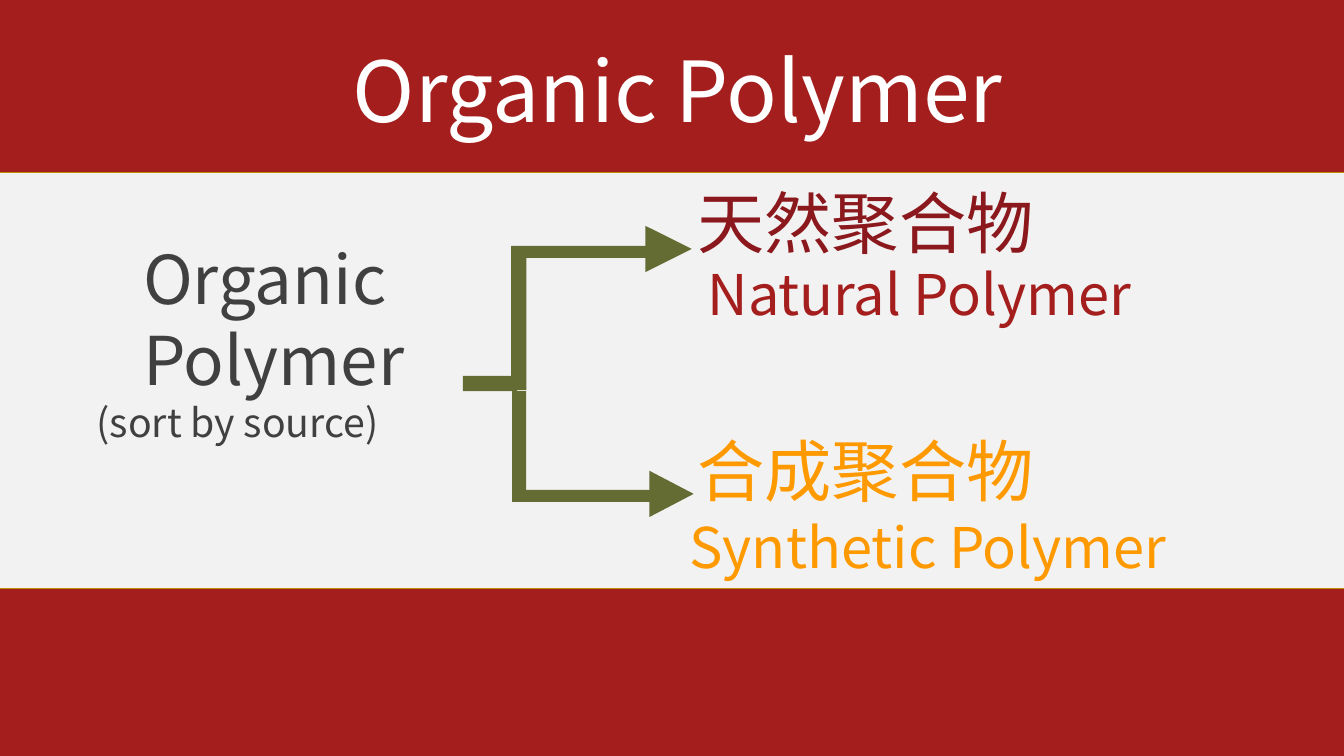
"""Build the Organic Polymer classification slide."""
from lxml import etree
from pptx import Presentation
from pptx.dml.color import RGBColor
from pptx.enum.shapes import MSO_SHAPE as Shape
from pptx.enum.text import MSO_ANCHOR, MSO_AUTO_SIZE, PP_ALIGN
from pptx.oxml.ns import qn
from pptx.util import Inches, Pt

FONT = "Noto Sans CJK TC"
COLORS = {
    "paper": "F2F2F2", "red": "A31E1C", "dark_red": "8B181D", "gold": "BD8E00",
    "blue": "43739E", "olive": "646C34", "grey": "404040", "orange": "FF9900",
    "white": "FFFFFF",
}


def add_block(kind, left, top, width, height, fill, line=None):
    block = page.shapes.add_shape(kind, *map(Inches, (left, top, width, height)))
    block.shadow.inherit = False
    block.fill.solid()
    block.fill.fore_color.rgb = RGBColor.from_string(COLORS[fill])
    if line:
        block.line.color.rgb = RGBColor.from_string(COLORS[line])
        block.line.width = Pt(1)
    else:
        block.line.fill.background()
    return block


def write_text(box, text, size, color, align=PP_ALIGN.LEFT):
    frame = box.text_frame
    for name, value in {"word_wrap": True, "auto_size": MSO_AUTO_SIZE.NONE,
                        "vertical_anchor": MSO_ANCHOR.TOP}.items():
        setattr(frame, name, value)
    para = frame.paragraphs[0]
    para.alignment = align
    span = para.add_run()
    span.text = text
    for name, value in {"name": FONT, "size": Pt(size)}.items():
        setattr(span.font, name, value)
    span.font.color.rgb = RGBColor.from_string(COLORS[color])
    latin = span.font._element.find(qn("a:latin"))
    east_asian = etree.Element(qn("a:ea"), typeface=FONT)
    latin.addnext(east_asian)


deck = Presentation()
deck.slide_width, deck.slide_height = Inches(13.33), Inches(7.5)
page = deck.slides.add_slide(deck.slide_layouts[5])

for top, height, fill, line in [
    (-0.11, 8.02, "paper", "blue"),
    (-0.11, 1.82, "red", "gold"),
    (5.84, 1.67, "red", "gold"),
]:
    add_block(Shape.RECTANGLE, -0.13, top, 13.61, height, fill, line)

title = page.shapes.title
title.element.getparent().append(title.element)
for name, value in {"left": 0.78, "top": 0.33, "width": 11.88, "height": 1.11}.items():
    setattr(title, name, Inches(value))
write_text(title, "Organic Polymer", 60, "white", PP_ALIGN.CENTER)

for kind, left, top, width, height, rotation in [
    (Shape.RIGHT_ARROW, 5.08, 4.8, 1.6, 0.24, 0),
    (Shape.ISOSCELES_TRIANGLE, 6.43, 4.68, 0.46, 0.44, 90),
    (Shape.RECTANGLE, 5.08, 3.88, 0.14, 1.1, 0),
    (Shape.RIGHT_ARROW, 5.07, 2.38, 1.5, 0.24, 0),
    (Shape.ISOSCELES_TRIANGLE, 6.4, 2.24, 0.46, 0.46, 90),
    (Shape.RECTANGLE, 5.07, 2.45, 0.15, 1.42, 0),
    (Shape.RECTANGLE, 4.59, 3.73, 0.54, 0.15, 0),
]:
    add_block(kind, left, top, width, height, "olive").rotation = rotation

for text, left, top, width, height, size, color in [
    ("Organic Polymer", 1.32, 2.31, 3.01, 1.72, 48, "grey"),
    ("(sort by source)", 0.86, 3.9, 3.47, 0.57, 28, "grey"),
    ("天然聚合物", 6.82, 1.75, 4.44, 0.91, 48, "dark_red"),
    ("Natural Polymer", 6.92, 2.53, 4.77, 0.77, 40, "red"),
    ("合成聚合物", 6.82, 4.21, 5.25, 0.91, 48, "orange"),
    ("Synthetic Polymer", 6.74, 5.04, 5.51, 0.77, 40, "orange"),
]:
    box = page.shapes.add_textbox(*map(Inches, (left, top, width, height)))
    write_text(box, text, size, color)

deck.save("out.pptx")
